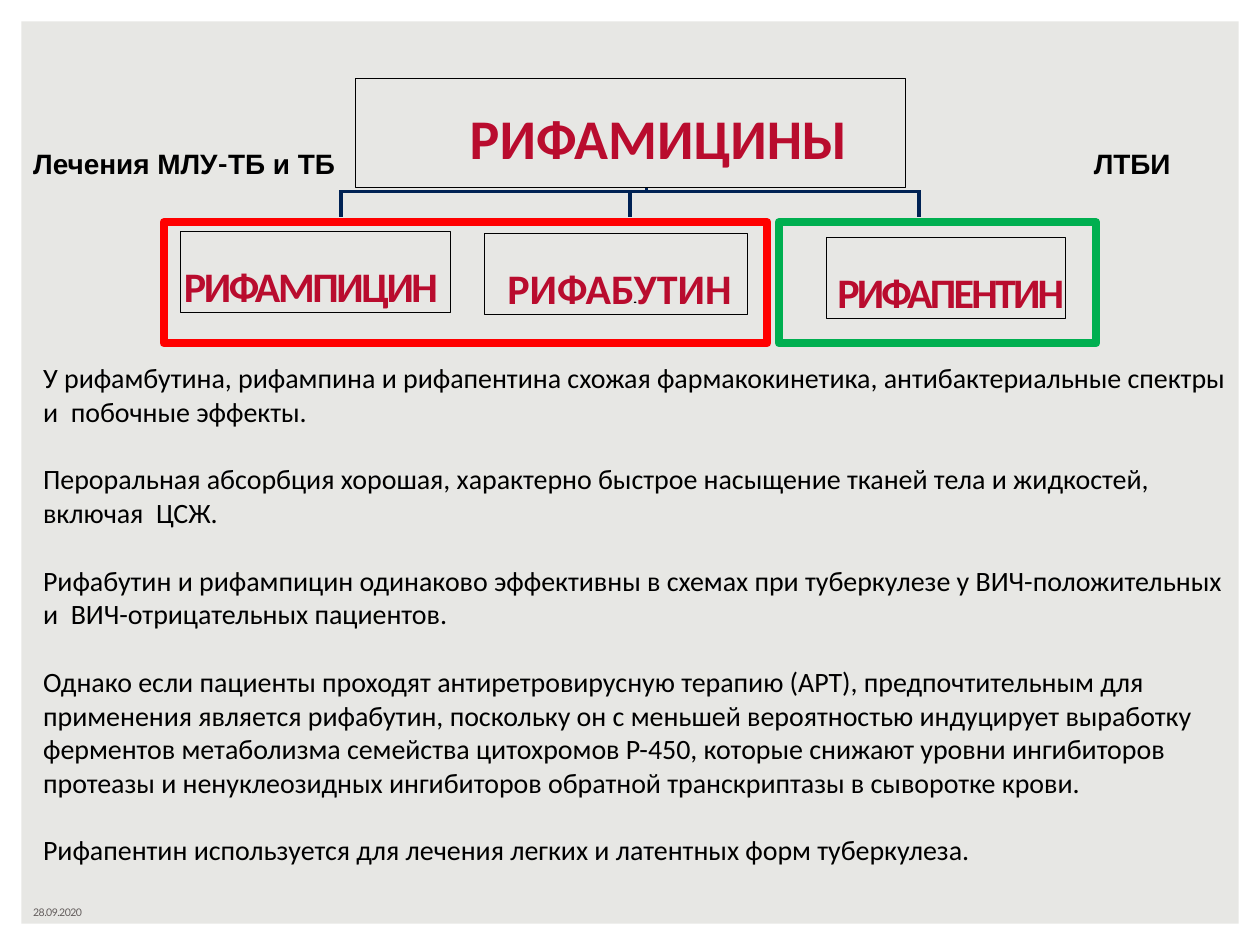
from lxml import etree
from pptx import Presentation
from pptx.dml.color import RGBColor
from pptx.enum.shapes import MSO_CONNECTOR, MSO_SHAPE
from pptx.enum.text import MSO_ANCHOR, PP_ALIGN
from pptx.oxml.ns import qn
from pptx.util import Cm, Pt

RECT, OVAL = MSO_SHAPE.RECTANGLE, MSO_SHAPE.OVAL
STRAIGHT = MSO_CONNECTOR.STRAIGHT
TOP, LEFT = MSO_ANCHOR.TOP, PP_ALIGN.LEFT

WIDTH, HEIGHT, MARGIN = 25.4, 19.05, 0.43
PAPER, CRIMSON, NAVY, BLACK = "E7E7E4", "B90C2E", "002254", "000000"
RED, GREEN, GREY = "FF0000", "00AF50", "625C5B"

# Each inner list is a group of paragraphs set close together
FACTS = [
    ["У рифамбутина, рифампина и рифапентина схожая фармакокинетика, "
     "антибактериальные спектры и  побочные эффекты."],
    ["Пероральная абсорбция хорошая, характерно быстрое насыщение тканей тела "
     "и жидкостей, включая  ЦСЖ."],
    ["Рифабутин и рифампицин одинаково эффективны в схемах при туберкулезе "
     "у ВИЧ-положительных и  ВИЧ-отрицательных пациентов."],
    ["Однако если пациенты проходят антиретровирусную терапию (АРТ), "
     "предпочтительным для",
     "применения является рифабутин, поскольку он с меньшей вероятностью "
     "индуцирует выработку  ферментов метаболизма семейства цитохромов P-450, "
     "которые снижают уровни ингибиторов",
     "протеазы и ненуклеозидных ингибиторов обратной транскриптазы "
     "в сыворотке крови."],
    ["Рифапентин используется для лечения легких и латентных форм туберкулеза."],
]


def rgb(value):
    return RGBColor.from_string(value)


def write(paragraph, text, size=16, font="Calibri", color=BLACK, bold=False,
          tracking=0):
    """Add a run; tracking is the letter spacing in points."""
    run = paragraph.add_run()
    run.text = text
    run.font.size = Pt(size)
    run.font.name = font
    run.font.bold = bold
    run.font.color.rgb = rgb(color)
    if tracking:
        run.font._element.set("spc", str(round(tracking * 100)))


class SlideBuilder:
    def __init__(self, slide):
        self.shapes = slide.shapes

    def panel(self, x, y, w, h, fill=None, line=None, weight=0.25, kind=RECT):
        shape = self.shapes.add_shape(kind, Cm(x), Cm(y), Cm(w), Cm(h))
        shape.shadow.inherit = False
        if fill:
            shape.fill.solid()
            shape.fill.fore_color.rgb = rgb(fill)
        else:
            shape.fill.background()
        if line:
            shape.line.color.rgb = rgb(line)
            shape.line.width = Pt(weight)
        else:
            shape.line.fill.background()
        return shape

    def first_paragraph(self, shape, left=0.03, top=0.03):
        """Set the insets and return the paragraph to write in."""
        frame = shape.text_frame
        frame.word_wrap = True
        frame.vertical_anchor = TOP
        frame.margin_left, frame.margin_top = Cm(left), Cm(top)
        frame.margin_right = frame.margin_bottom = 0
        frame.paragraphs[0].alignment = LEFT
        return frame.paragraphs[0]

    def name_box(self, x, y, w, h, text, left, top, fill=PAPER, **style):
        box = self.panel(x, y, w, h, fill, BLACK)
        write(self.first_paragraph(box, left, top), text,
              color=CRIMSON, bold=True, **style)

    def label(self, x, y, w, h, *parts, **style):
        """Add one line of text; each part is a (text, font) pair."""
        box = self.shapes.add_textbox(Cm(x), Cm(y), Cm(w), Cm(h))
        paragraph = self.first_paragraph(box)
        for text, font in parts:
            write(paragraph, text, font=font, **style)

    def body(self, x, y, w, h, groups, gap):
        box = self.shapes.add_textbox(Cm(x), Cm(y), Cm(w), Cm(h))
        paragraph = self.first_paragraph(box)
        for g, group in enumerate(groups):
            for i, text in enumerate(group):
                if g or i:
                    paragraph = box.text_frame.add_paragraph()
                if g and i == 0:
                    paragraph.space_before = Pt(gap)
                write(paragraph, text)

    def line(self, x1, y1, x2, y2):
        connector = self.shapes.add_connector(
            STRAIGHT, Cm(x1), Cm(y1), Cm(x2), Cm(y2))
        connector.line.color.rgb = rgb(NAVY)
        connector.line.width = Pt(2.04)
        properties = connector._element.spPr
        properties.get_or_add_ln().set("cap", "sq")
        etree.SubElement(properties, qn("a:effectLst"))


def main():
    deck = Presentation()
    deck.slide_width, deck.slide_height = Cm(WIDTH), Cm(HEIGHT)
    builder = SlideBuilder(deck.slides.add_slide(deck.slide_layouts[6]))

    builder.panel(MARGIN, MARGIN, WIDTH - 2 * MARGIN, HEIGHT - 2 * MARGIN, PAPER)

    # Tree from the drug class to its three members
    bar_y, middle, reach = 3.86, WIDTH / 2, 5.83
    builder.line(13.03, 3.38, 13.03, bar_y)
    builder.line(middle - reach, bar_y, middle + reach, bar_y)
    for x in (middle - reach, middle, middle + reach):
        builder.line(x, bar_y, x, 4.33)

    builder.name_box(7.16, 1.57, 11.09, 2.2, "РИФАМИЦИНЫ", 2.31, 0.51, size=32)
    drugs = [
        ("РИФАМПИЦИН", 3.63, 4.67, 5.45, 0.08, PAPER, -1.4),
        ("РИФАБУТИН", 9.77, 4.7, 5.3, 0.46, None, 0),
        ("РИФАПЕНТИН", 16.65, 4.79, 4.83, 0.23, PAPER, -1.6),
    ]
    for name, x, y, w, left, fill, tracking in drugs:
        builder.name_box(x, y, w, 1.63, name, left, 0.59, fill,
                         size=24, tracking=tracking)
    builder.panel(12.78, 6.08, 0.05, 0.03, BLACK, kind=OVAL)

    # Frames by indication
    for x, w, color in ((3.3, 12.17, RED), (15.7, 6.4, GREEN)):
        builder.panel(x, 4.48, w, 2.44, line=color, weight=4.56)

    builder.body(0.84, 7.24, 23.93, 11.1, FACTS, gap=19.5)
    builder.label(0.64, 18.24, 1.02, 0.3, ("28.09.2020", "Lato"),
                  size=6, color=GREY, tracking=-0.3)
    builder.label(0.64, 2.92, 6.4, 0.71, ("Лечения МЛУ", "Arial"),
                  ("-", "Lato"), ("ТБ и ТБ", "Arial"), bold=True)
    builder.label(22.02, 2.92, 1.9, 0.71, ("ЛТБИ", "Arial"), bold=True)

    deck.save("out.pptx")


if __name__ == "__main__":
    main()
